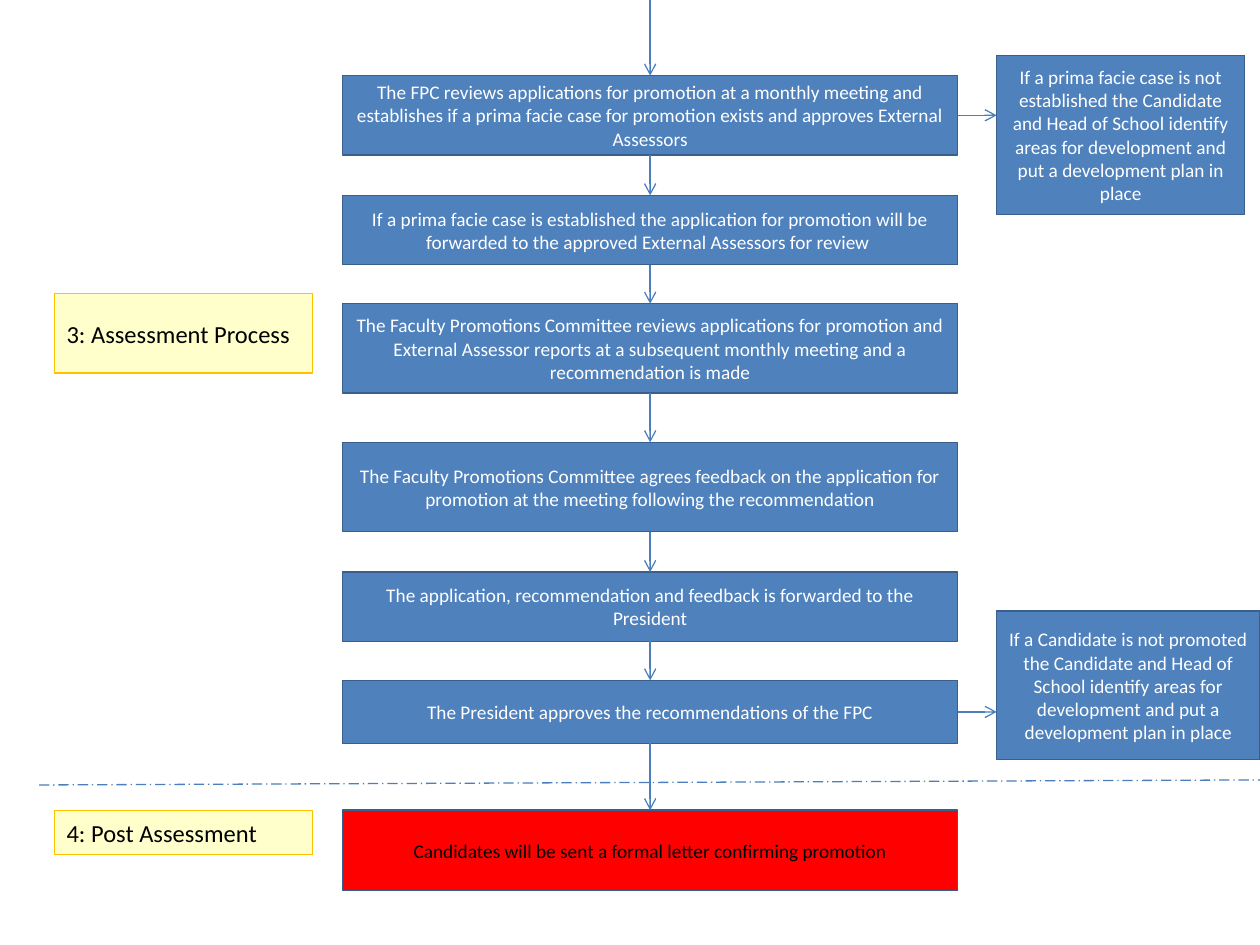
from lxml import etree
from pptx import Presentation
from pptx.dml.color import RGBColor
from pptx.enum.dml import MSO_LINE_DASH_STYLE as Dash
from pptx.enum.shapes import MSO_CONNECTOR as Connector, MSO_SHAPE as Shape
from pptx.enum.text import MSO_ANCHOR as Anchor, PP_ALIGN as Align
from pptx.oxml.ns import qn
from pptx.util import Inches, Pt

TOP, LEFT, BOTTOM, RIGHT = range(4)
STEP_LEFT, STEP_WIDTH = 2.72, 4.88
STEP_CENTRE = STEP_LEFT + STEP_WIDTH / 2
NOTE_LEFT = 7.91
LABEL_LEFT, LABEL_WIDTH = 0.43, 2.05
ARROW_COLOUR = "4B7EBC"

STEP = {"fill": "4F81BD", "line": "3A5F8C", "colour": "FFFFFF", "size": 11, "align": Align.CENTER}
OUTCOME = {**STEP, "fill": "FF0000", "colour": "000000"}
LABEL = {"fill": "FFFFCC", "line": "FFC000", "colour": "000000", "size": 14, "align": Align.LEFT}

STEPS = [
    (0.6, 0.63, STEP, "The FPC reviews applications for promotion at a monthly meeting and "
     "establishes if a prima facie case for promotion exists and approves External Assessors"),
    (1.55, 0.55, STEP, "If a prima facie case is established the application for promotion will be "
     "forwarded to the approved External Assessors for review "),
    (2.41, 0.71, STEP, "The Faculty Promotions Committee reviews applications for promotion and "
     "External Assessor reports at a subsequent monthly meeting and a recommendation is made"),
    (3.51, 0.71, STEP, "The Faculty Promotions Committee agrees feedback on the application for "
     "promotion at the meeting following the recommendation"),
    (4.54, 0.55, STEP, "The application, recommendation and feedback is forwarded to the President"),
    (5.4, 0.5, STEP, "The President approves the recommendations of the FPC"),
    (6.43, 0.64, OUTCOME, "Candidates will be sent a formal letter confirming promotion"),
]
NOTES = [
    (0, 0.44, 1.97, 1.26, "If a prima facie case is not established the Candidate and Head of "
     "School identify areas for development and put a development plan in place"),
    (5, 4.85, 2.09, 1.18, "If a Candidate is not promoted the Candidate and Head of School "
     "identify areas for development and put a development plan in place"),
]
LABELS = [(2.33, 0.63, "3: Assessment Process"), (6.43, 0.35, "4: Post Assessment")]


def rgb(value):
    """Turn a hex string into a colour."""
    return RGBColor.from_string(value)


def set_all(target, values):
    """Set every attribute named in a dict of format values."""
    for name, value in values.items():
        setattr(target, name, value)


def add_box(page, left, top, width, height, text, style):
    """Add a process box with its text and return it."""
    box = page.shapes.add_shape(Shape.FLOWCHART_PROCESS, *map(Inches, (left, top, width, height)))
    box.shadow.inherit = False
    box.fill.solid()
    box.fill.fore_color.rgb = rgb(style["fill"])
    box.line.color.rgb = rgb(style["line"])
    box.line.width = Pt(0.75)
    set_all(box.text_frame, {"word_wrap": True, "vertical_anchor": Anchor.MIDDLE})
    para = box.text_frame.paragraphs[0]
    para.alignment = style["align"]
    span = para.add_run()
    span.text = text
    set_all(span.font, {"name": "Calibri", "size": Pt(style["size"])})
    span.font.color.rgb = rgb(style["colour"])
    return box


def add_line(page, start, end):
    """Add a thin straight line without a shadow and return it."""
    line = page.shapes.add_connector(Connector.STRAIGHT, *start, *end)
    set_all(line.line, {"width": Pt(0.75)})
    line.line.color.rgb = rgb(ARROW_COLOUR)
    etree.SubElement(line._element.spPr, qn("a:effectLst"))
    return line


def add_arrow(page, start, end):
    """Add a line with an open arrowhead at its end and return it."""
    arrow = add_line(page, start, end)
    etree.SubElement(arrow.line._get_or_add_ln(), qn("a:tailEnd"), type="arrow")
    return arrow


def add_steps(page):
    """Add the column of steps joined by arrows and return the boxes."""
    boxes = [add_box(page, STEP_LEFT, top, STEP_WIDTH, height, text, style)
             for top, height, style, text in STEPS]
    centre = Inches(STEP_CENTRE)
    add_arrow(page, (centre, 0), (centre, boxes[0].top)).end_connect(boxes[0], TOP)
    for upper, lower in zip(boxes, boxes[1:]):
        arrow = add_arrow(page, (centre, upper.top + upper.height), (centre, lower.top))
        arrow.begin_connect(upper, BOTTOM)
        arrow.end_connect(lower, TOP)
    return boxes


def add_note(page, step, top, width, height, text):
    """Add a side note with a level arrow from its step."""
    note = add_box(page, NOTE_LEFT, top, width, height, text, STEP)
    middle = step.top + step.height // 2
    arrow = add_arrow(page, (step.left + step.width, middle), (note.left, middle))
    arrow.begin_connect(step, RIGHT)


def main():
    """Build the promotion flow chart and save it."""
    deck = Presentation()
    set_all(deck, {"slide_width": Inches(10), "slide_height": Inches(7.5)})
    page = deck.slides.add_slide(deck.slide_layouts[6])
    steps = add_steps(page)
    for index, *note in NOTES:
        add_note(page, steps[index], *note)
    for top, height, text in LABELS:
        add_box(page, LABEL_LEFT, top, LABEL_WIDTH, height, text, LABEL)
    divider = add_line(page, (Inches(0.31), Inches(6.23)), (Inches(10), Inches(6.19)))
    divider.line.dash_style = Dash.LONG_DASH_DOT
    deck.save("out.pptx")


if __name__ == "__main__":
    main()
